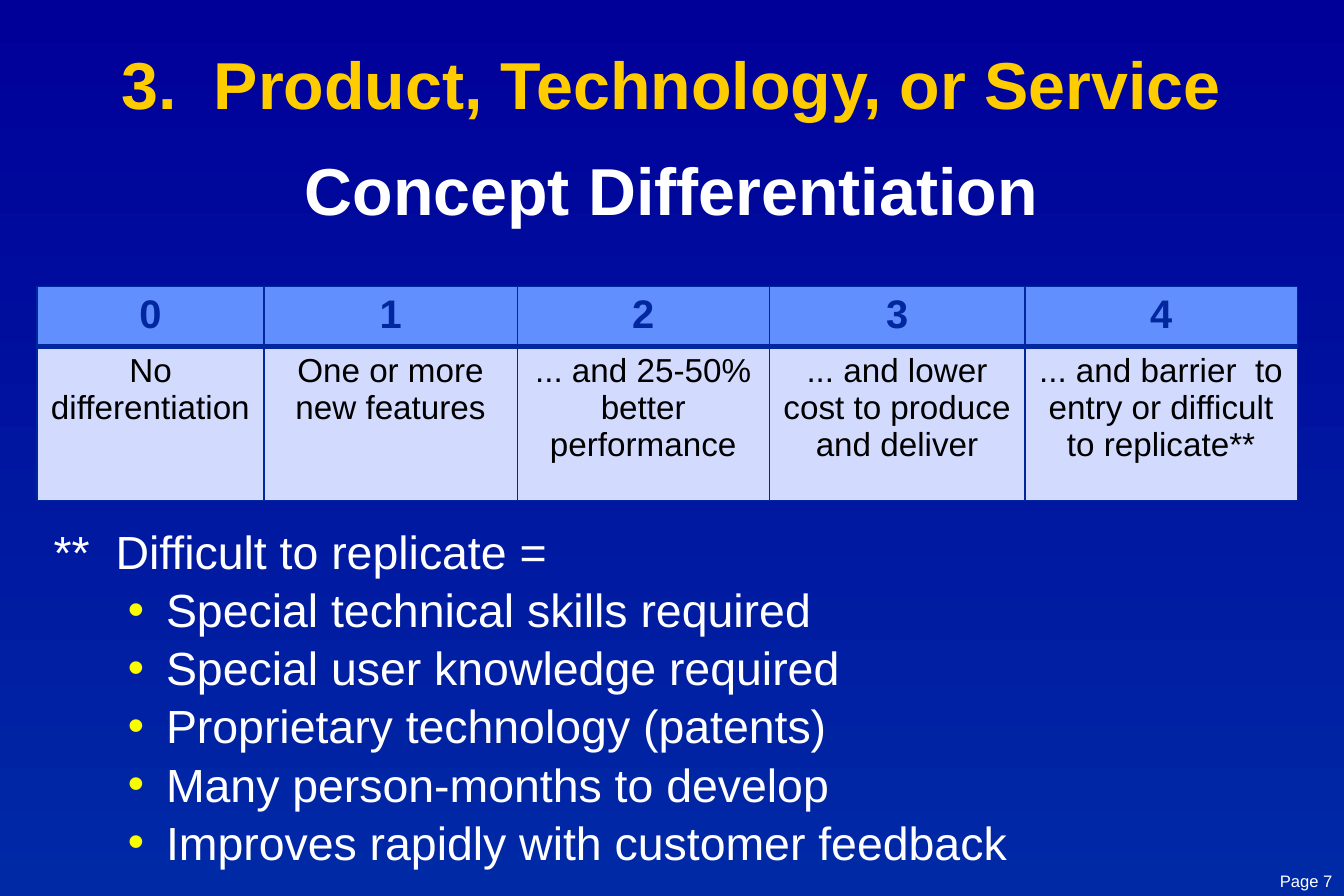
from lxml import etree
from pptx import Presentation
from pptx import util as u
from pptx.dml import color
from pptx.enum import text
from pptx.oxml import ns

FONT = "Arial"
HEX = {
    "top": "000099", "base": "0029A6", "gold": "FFCC00", "white": "FFFFFF",
    "dot": "FAFD00", "rule": "00279F", "head": "618FFD", "cell": "D2DBFE",
    "black": "000000",
}
SCALE = ["0", "1", "2", "3", "4"]
LEVELS = [
    "No differentiation",
    "One or more new features",
    "... and 25-50% better performance",
    "... and lower cost to produce and deliver",
    "... and barrier  to entry or difficult to replicate**",
]
POINTS = [
    "Special technical skills required",
    "Special user knowledge required",
    "Proprietary technology (patents)",
    "Many person-months to develop",
    "Improves rapidly with customer feedback",
]


def rgb(name):
    return color.RGBColor.from_string(HEX[name])


def style(para, size, tint, bold=False, align=text.PP_ALIGN.LEFT):
    para.alignment = align
    for run in para.runs:
        font = run.font
        font.name, font.size, font.bold = FONT, u.Pt(size), bold
        font.color.rgb = rgb(tint)


def add_box(slide, box, lines, pad=0):
    shape = slide.shapes.add_textbox(*map(u.Inches, box))
    frame = shape.text_frame
    frame.word_wrap = True
    frame.margin_left = frame.margin_right = u.Inches(pad)
    frame.margin_top = frame.margin_bottom = u.Inches(pad / 2)
    frame.text = "\n".join(lines)
    return frame.paragraphs


def add_dot(para, left, hang):
    props = para._p.get_or_add_pPr()
    props.set("marL", str(u.Inches(left)))
    props.set("indent", str(-u.Inches(hang)))
    tint = etree.SubElement(props, ns.qn("a:buClr"))
    etree.SubElement(tint, ns.qn("a:srgbClr"), val=HEX["dot"])
    etree.SubElement(props, ns.qn("a:buFont"), typeface=FONT)
    etree.SubElement(props, ns.qn("a:buChar"), char="•")


def add_rules(cell, widths):
    props = cell._tc.get_or_add_tcPr()
    for i, (side, width) in enumerate(zip("LRTB", widths)):
        line = etree.Element(ns.qn("a:ln" + side), w=str(u.Pt(width)))
        fill = etree.SubElement(line, ns.qn("a:solidFill"))
        etree.SubElement(fill, ns.qn("a:srgbClr"), val=HEX["rule"])
        props.insert(i, line)


# Two-line heading
def add_title(slide, box):
    topic, focus = add_box(
        slide, box, ["3.  Product, Technology, or Service", "Concept Differentiation"])
    style(topic, 40, "gold", True, text.PP_ALIGN.CENTER)
    style(focus, 40, "white", True, text.PP_ALIGN.CENTER)
    focus.space_before = u.Pt(16)


# Rating scale
def add_scale(slide, box, cols, rows):
    frame = slide.shapes.add_table(2, len(cols), *map(u.Inches, box))
    table = frame.table
    for col, width in zip(table.columns, cols):
        col.width = u.Inches(width)
    looks = [
        (SCALE, "head", 24, "rule", True, (1, 1, 1, 3)),
        (LEVELS, "cell", 20, "black", False, (1, 1, 3, 1)),
    ]
    for r, (words, fill, size, tint, bold, rules) in enumerate(looks):
        table.rows[r].height = u.Inches(rows[r])
        for c, word in enumerate(words):
            cell = table.cell(r, c)
            cell.text = word
            style(cell.text_frame.paragraphs[0], size, tint, bold,
                  text.PP_ALIGN.CENTER)
            cell.fill.solid()
            cell.fill.fore_color.rgb = rgb(fill)
            add_rules(cell, rules)


# Footnote with bullets
def add_notes(slide, box):
    lead, *items = add_box(slide, box, ["**  Difficult to replicate ="] + POINTS)
    style(lead, 28, "white")
    for item in items:
        add_dot(item, 0.94, 0.32)
        item.space_before = u.Pt(1.4)
        style(item, 28, "white")


# Page number
def add_page(slide, box):
    para = add_box(slide, box, ["Page 7"], 0.1)[0]
    style(para, 10, "white", align=text.PP_ALIGN.RIGHT)


def main():
    deck = Presentation()
    deck.slide_width, deck.slide_height = u.Inches(11.25), u.Inches(7.5)
    slide = deck.slides.add_slide(deck.slide_layouts[6])
    back = slide.background.fill
    back.gradient()
    back.gradient_angle = 270
    for stop, name in zip(back.gradient_stops, ("top", "base")):
        stop.color.rgb = rgb(name)
    add_title(slide, (0.56, 0.36, 10.12, 1.66))
    add_notes(slide, (0.45, 4.38, 10.67, 2.8))
    add_page(slide, (10.07, 7.24, 1.18, 0.26))
    add_scale(slide, (0.31, 2.4, 10.55, 1.76),
              (1.9, 2.12, 2.11, 2.14, 2.28), (0.47, 1.29))
    deck.save("out.pptx")


if __name__ == "__main__":
    main()
